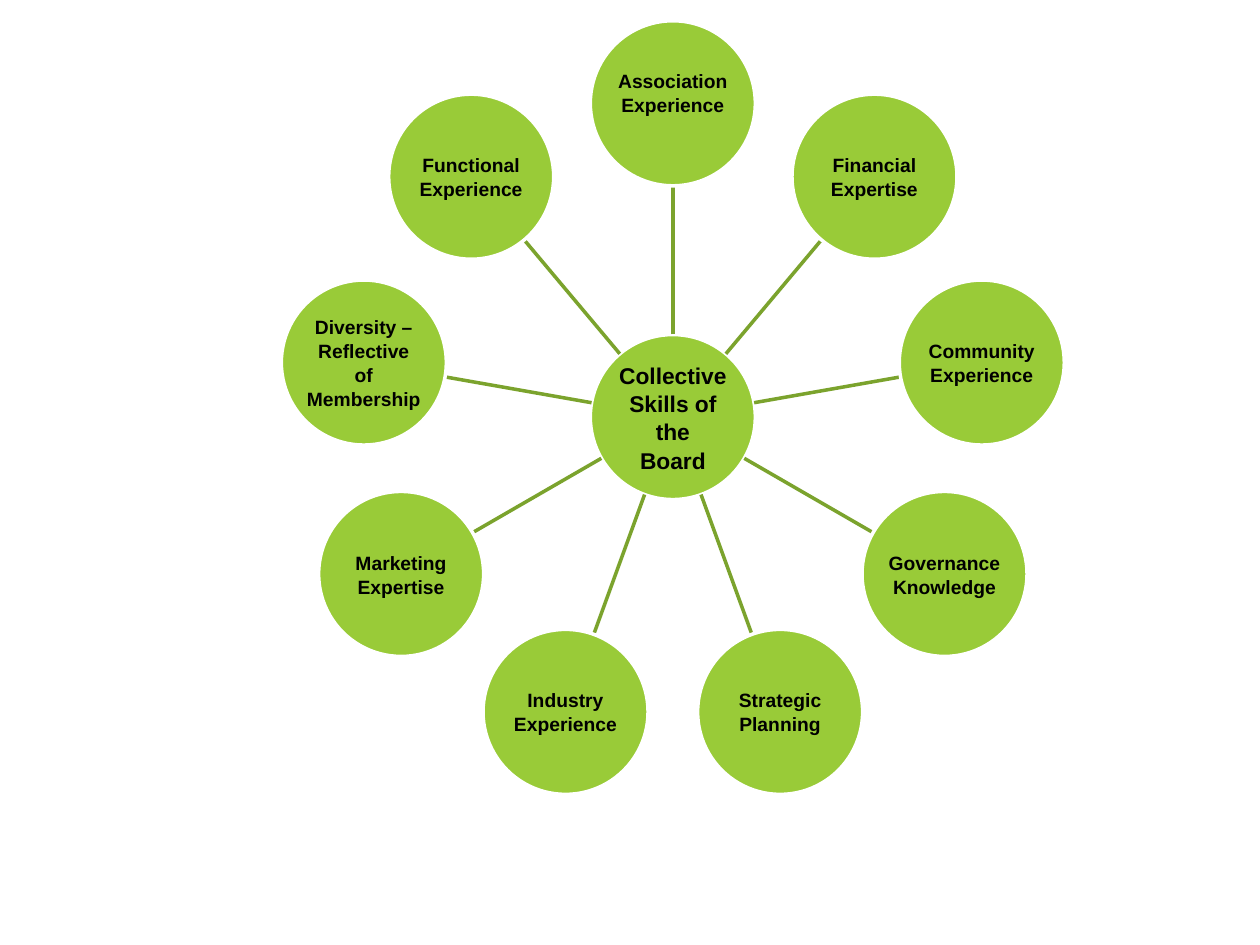
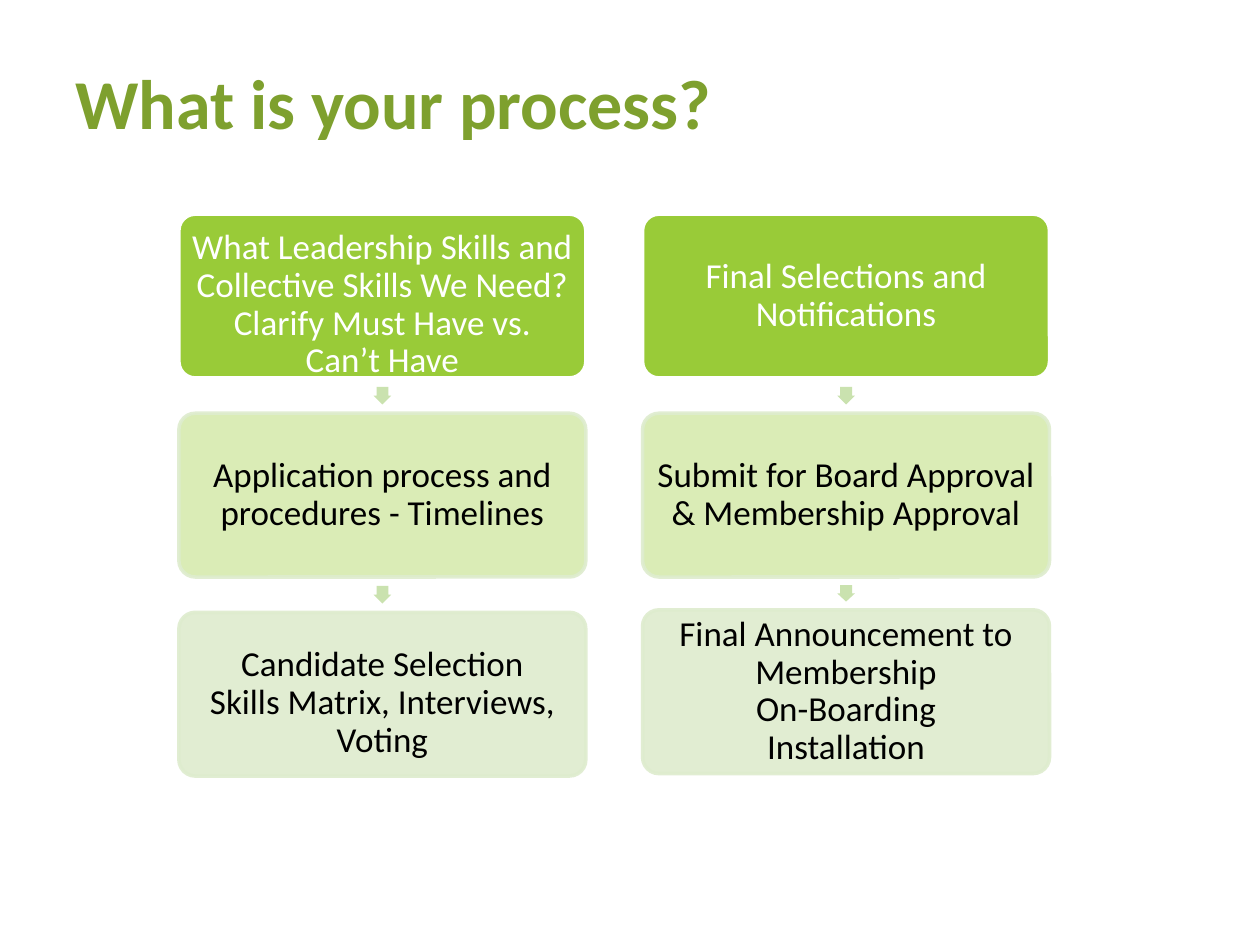
from math import cos, radians, sin

from lxml.etree import SubElement
from pptx import Presentation
from pptx.dml.color import RGBColor
from pptx.enum.shapes import MSO_CONNECTOR, MSO_SHAPE
from pptx.enum.text import MSO_ANCHOR, MSO_AUTO_SIZE, PP_ALIGN
from pptx.oxml.ns import qn
from pptx.util import Inches, Pt

GREEN, SPOKE_GREEN, TITLE_GREEN = "99CB38", "7BA32D", "7EA02E"
LIME, SAGE, ARROW_GREEN = "D6EAAF", "DEECCE", "CAE2AF"
WHITE, BLACK = "FFFFFF", "000000"
BLANK_LAYOUT, TITLE_ONLY_LAYOUT = 6, 5

HUB_X, HUB_Y = 5.34, 3.31
ORBIT, DIAMETER = 2.49, 1.31
HUB_TEXT = ["Collective", "Skills of the", "Board"]
SKILLS = [
    ["Association Experience"],
    ["Financial", "Expertise"],
    ["Community", "Experience"],
    ["Governance", "Knowledge"],
    ["Strategic", "Planning"],
    ["Industry", "Experience"],
    ["Marketing", "Expertise"],
    ["Diversity –", "Reflective\vof", "Membership"],
    ["Functional", "Experience"],
]

CARD_WIDTH, CARD_HEIGHT = 3.23, 1.3
STEP_STYLES = [(GREEN, WHITE, WHITE, 100), (LIME, SAGE, BLACK, 90), (SAGE, SAGE, BLACK, 90)]
PROCESS = [
    (1.42, [
        (1.7, 0.14, ["What Leadership Skills and Collective Skills We Need?",
                     "Clarify Must Have vs.", "Can’t Have"]),
        (3.28, 0, ["Application process and procedures - Timelines"]),
        (4.86, 0.14, ["Candidate Selection", "Skills Matrix, Interviews, Voting"]),
    ]),
    (5.1, [
        (1.7, 0, ["Final Selections and Notifications"]),
        (3.28, 0, ["Submit for Board Approval & Membership Approval"]),
        (4.84, 0, ["Final Announcement to Membership", "On-Boarding", "Installation"]),
    ]),
]


def color(hex_value):
    return RGBColor.from_string(hex_value)


def apply(target, values):
    for name, value in values.items():
        setattr(target, name, value)


class Deck:
    def __init__(self):
        self.presentation = Presentation()
        apply(self.presentation, {"slide_width": Inches(10), "slide_height": Inches(7.5)})
        self.slide = None

    def new_slide(self, layout):
        self.slide = self.presentation.slides.add_slide(self.presentation.slide_layouts[layout])

    def title(self, text):
        heading = self.slide.shapes.title
        apply(heading, {"left": Inches(0.5), "top": Inches(0.42),
                        "width": Inches(8.5), "height": Inches(1)})
        self.label(heading, [text], "Calibri", 40, TITLE_GREEN, bold=True,
                   align=PP_ALIGN.LEFT, anchor=MSO_ANCHOR.TOP, inset=(0.1, 0.05, 0.1, 0.05))

    def shape(self, preset, left, top, width, height, fill, outline=None, opacity=100):
        shape = self.slide.shapes.add_shape(
            preset, Inches(left), Inches(top), Inches(width), Inches(height))
        shape.shadow.inherit = False
        shape.fill.solid()
        shape.fill.fore_color.rgb = color(fill)
        if outline:
            shape.line.color.rgb = color(outline)
            shape.line.width = Pt(2)
        else:
            shape.line.fill.background()
        if opacity < 100:
            for tint in shape.element.spPr.iter(qn("a:srgbClr")):
                SubElement(tint, qn("a:alpha"), val=str(opacity * 1000))
        return shape

    def label(self, shape, lines, font, size, ink, bold=False, align=PP_ALIGN.CENTER,
              anchor=MSO_ANCHOR.MIDDLE, inset=(0, 0, 0, 0), spacing=1.0):
        frame = shape.text_frame
        left, top, right, bottom = map(Inches, inset)
        apply(frame, {"text": "\n".join(lines), "word_wrap": True,
                      "auto_size": MSO_AUTO_SIZE.NONE, "vertical_anchor": anchor,
                      "margin_left": left, "margin_top": top,
                      "margin_right": right, "margin_bottom": bottom})
        for paragraph in frame.paragraphs:
            apply(paragraph, {"alignment": align, "line_spacing": spacing})
            for run in paragraph.runs:
                apply(run.font, {"name": font, "size": Pt(size), "bold": bold})
                run.font.color.rgb = color(ink)

    def circle(self, x, y, lines, size, lift=0):
        circle = self.shape(MSO_SHAPE.OVAL, x - DIAMETER / 2, y - DIAMETER / 2,
                            DIAMETER, DIAMETER, GREEN, WHITE)
        self.label(circle, lines, "Arial", size, BLACK, bold=True,
                   inset=(0, 0, 0, lift), spacing=1.04)

    def spoke(self, start, end):
        spoke = self.slide.shapes.add_connector(
            MSO_CONNECTOR.STRAIGHT, *map(Inches, start + end))
        spoke.line.color.rgb = color(SPOKE_GREEN)
        spoke.line.width = Pt(2)
        SubElement(spoke.element.spPr, qn("a:effectLst"))

    def card(self, left, top, lines, drop, style):
        fill, outline, ink, opacity = style
        card = self.shape(MSO_SHAPE.ROUNDED_RECTANGLE, left, top, CARD_WIDTH, CARD_HEIGHT,
                          fill, outline, opacity)
        card.adjustments[0] = 0.1
        self.label(card, lines, "Calibri", 20, ink,
                   inset=(0.03, 0.03 + drop, 0.03, 0.03), spacing=0.9)

    def arrow(self, x, y, length):
        arrow = self.shape(MSO_SHAPE.RIGHT_ARROW, x - length / 2, y - 0.07,
                           length, 0.14, ARROW_GREEN)
        arrow.rotation = 90
        arrow.adjustments[0] = 0.67


def around_hub(angle, radius):
    return HUB_X + radius * sin(angle), HUB_Y - radius * cos(angle)


def build_skills_wheel(deck):
    deck.new_slide(BLANK_LAYOUT)
    deck.circle(HUB_X, HUB_Y, HUB_TEXT, 13)
    for index, skill in enumerate(SKILLS):
        angle = radians(360 / len(SKILLS) * index)
        deck.spoke(around_hub(angle, DIAMETER / 2), around_hub(angle, ORBIT - DIAMETER / 2))
        deck.circle(*around_hub(angle, ORBIT), skill, 11, lift=0 if index else 0.17)


def build_process(deck):
    deck.new_slide(TITLE_ONLY_LAYOUT)
    deck.title("What is your process?")
    for left, steps in PROCESS:
        for (top, drop, lines), style in zip(steps, STEP_STYLES):
            deck.card(left, top, lines, drop, style)
        for (upper, *_), (lower, *_) in zip(steps, steps[1:]):
            gap = lower - upper - CARD_HEIGHT
            deck.arrow(left + CARD_WIDTH / 2, lower - gap / 2, gap / 2)


def main():
    deck = Deck()
    build_skills_wheel(deck)
    build_process(deck)
    deck.presentation.save("out.pptx")


if __name__ == "__main__":
    main()
